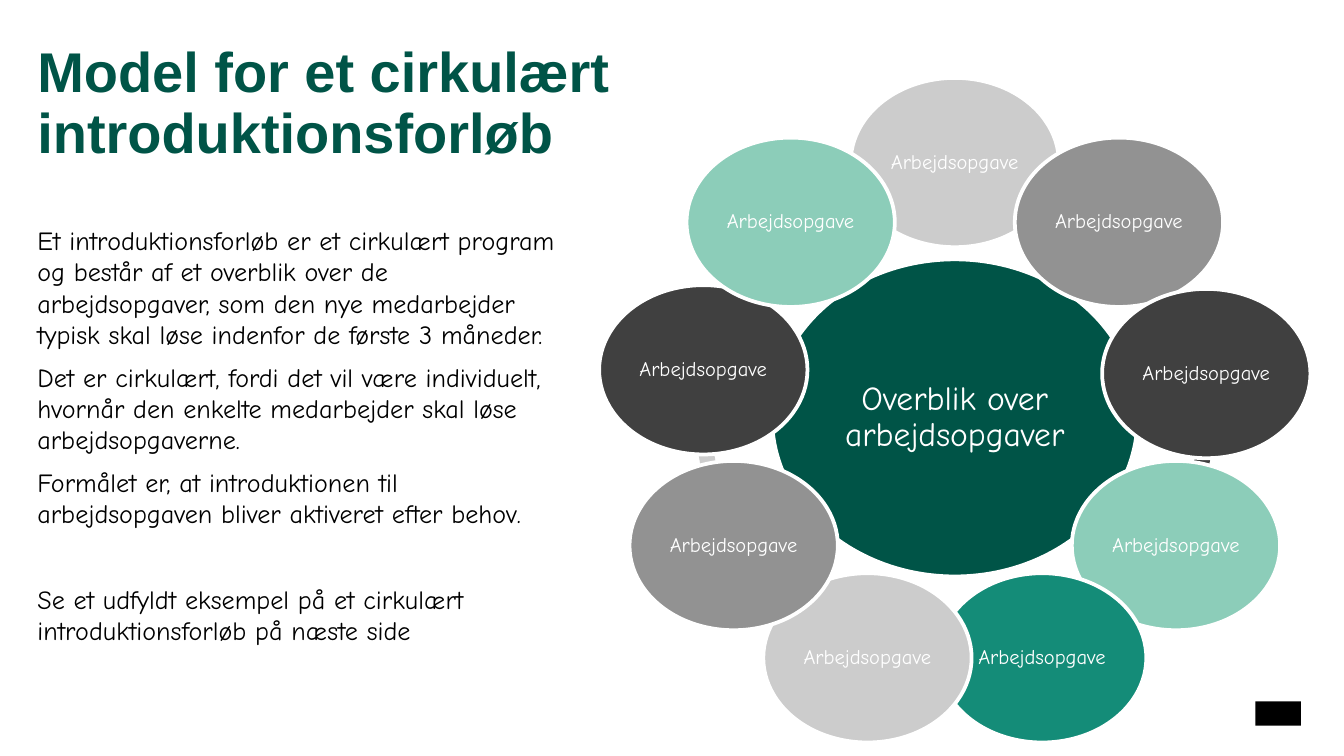
import math

from pptx import Presentation
from pptx.dml.color import RGBColor
from pptx.enum import shapes, text
from pptx.util import Pt

COLORS = {
    "dark_green": "005447",
    "green": "148C78",
    "mint": "8CCDB9",
    "charcoal": "404040",
    "grey": "929292",
    "light_grey": "CCCCCC",
    "white": "FFFFFF",
    "black": "000000",
}
HEADING_FONT, BODY_FONT = "Arial", "Comic Neue"

TITLE = "Model for et cirkulært introduktionsforløb"
PARAGRAPHS = [
    "Et introduktionsforløb er et cirkulært program og består af et overblik "
    "over de arbejdsopgaver, som den nye medarbejder typisk skal løse "
    "indenfor de første 3 måneder.",
    "Det er cirkulært, fordi det vil være individuelt, hvornår den enkelte "
    "medarbejder skal løse arbejdsopgaverne.",
    "Formålet er, at introduktionen til arbejdsopgaven bliver aktiveret "
    "efter behov.",
    "Se et udfyldt eksempel på et cirkulært introduktionsforløb på næste side",
]
HUB_LABEL, TASK_LABEL = "Overblik over arbejdsopgaver", "Arbejdsopgave"

# Clockwise from the top
TASK_COLORS = ["light_grey", "grey", "charcoal", "mint", "green",
               "light_grey", "grey", "charcoal", "mint"]
LIFTED_TASK, LIFT = 7, 2
# Start angle, end angle, colour, from back to front
ARCS = [
    (138, 162, "mint"), (114.58, 138.14, "charcoal"), (89.87, 114.37, "grey"),
    (66, 90, "light_grey"), (42, 66, "green"), (18, 42, "mint"),
    (210, 18, "charcoal"), (186, 210, "grey"), (162, 186, "light_grey"),
]


def rgb(name):
    return RGBColor.from_string(COLORS[name])


def place(shape, box):
    shape.left, shape.top, shape.width, shape.height = map(Pt, box)


def format_frame(frame, size, font, color, inset=0, bold=False,
                 align=text.PP_ALIGN.LEFT, anchor=text.MSO_ANCHOR.TOP,
                 line_spacing=1.0):
    frame.word_wrap = True
    frame.auto_size = text.MSO_AUTO_SIZE.NONE
    frame.vertical_anchor = anchor
    frame.margin_left = frame.margin_right = Pt(inset)
    frame.margin_top = frame.margin_bottom = Pt(inset)
    for paragraph in frame.paragraphs:
        paragraph.alignment = align
        paragraph.line_spacing = line_spacing
        paragraph.space_before = Pt(0)
        for run in paragraph.runs:
            run.font.size, run.font.name, run.font.bold = Pt(size), font, bold
            run.font.color.rgb = rgb(color)


def add_filled(slide, kind, box, color):
    shape = slide.shapes.add_shape(kind, *map(Pt, box))
    shape.shadow.inherit = False
    shape.fill.solid()
    shape.fill.fore_color.rgb = rgb(color)
    shape.line.fill.background()
    return shape


def add_bubble(slide, center_x, center_y, width, height, color, label, size, inset):
    box = (center_x - width / 2, center_y - height / 2, width, height)
    bubble = add_filled(slide, shapes.MSO_SHAPE.OVAL, box, color)
    bubble.line.color.rgb = rgb("white")
    bubble.line.width = Pt(2)
    bubble.text_frame.text = label
    format_frame(bubble.text_frame, size, BODY_FONT, "white", inset,
                 align=text.PP_ALIGN.CENTER, anchor=text.MSO_ANCHOR.MIDDLE,
                 line_spacing=0.9)


def fill_title(slide, box):
    title = slide.shapes.title
    place(title, box)
    title.text_frame.text = TITLE
    format_frame(title.text_frame, 30, HEADING_FONT, "dark_green", bold=True,
                 line_spacing=0.9)


def fill_body(slide, box):
    body = slide.placeholders[1]
    place(body, box)
    frame = body.text_frame
    frame.text = "\n".join(PARAGRAPHS)
    format_frame(frame, 14, BODY_FONT, "black")
    for paragraph in frame.paragraphs:
        paragraph.space_after = Pt(6)
        properties = paragraph._p.get_or_add_pPr()
        properties.set("marL", "0")
        properties.set("indent", "0")
        bullet_none = properties.makeelement(
            "{http://schemas.openxmlformats.org/drawingml/2006/main}buNone", {})
        properties.append(bullet_none)
    # The closing hint stands one line apart
    frame.paragraphs[-1].space_before = Pt(22.8)


def add_cycle(slide, box):
    left, top, width, height = box
    center_x, center_y = left + width / 2, top + height / 2
    radius = width / 2 - 1.8

    # Thin ring behind the bubbles
    for start, end, color in ARCS:
        arc = add_filled(slide, shapes.MSO_SHAPE.BLOCK_ARC, box, color)
        # Angles are stored in 60000ths of a degree, adjustments in 100000ths
        arc.adjustments[0] = start * 0.6
        arc.adjustments[1] = end * 0.6
        arc.adjustments[2] = 0.03

    # Hub
    add_bubble(slide, center_x, center_y, 195.8, 169.9, "dark_green",
               HUB_LABEL, 18, 2.2)

    # Tasks, evenly spread around the hub
    for index, color in enumerate(TASK_COLORS):
        angle = 2 * math.pi * index / len(TASK_COLORS)
        lift = LIFT if index == LIFTED_TASK else 0
        add_bubble(slide, center_x + radius * math.sin(angle),
                   center_y - radius * math.cos(angle) - lift,
                   111.6, 90.7, color, TASK_LABEL, 11, 1.4)


def main():
    presentation = Presentation()
    presentation.slide_width, presentation.slide_height = Pt(720), Pt(405)
    slide = presentation.slides.add_slide(presentation.slide_layouts[1])

    # Plain mark in the corner
    add_filled(slide, shapes.MSO_SHAPE.RECTANGLE, (672.5, 375.8, 24.5, 13), "black")
    fill_title(slide, (20, 23.8, 589.7, 77.8))
    fill_body(slide, (20, 120.2, 283.7, 210.2))
    add_cycle(slide, (372.9, 85.3, 277.2, 277.2))

    presentation.save("out.pptx")


if __name__ == "__main__":
    main()
